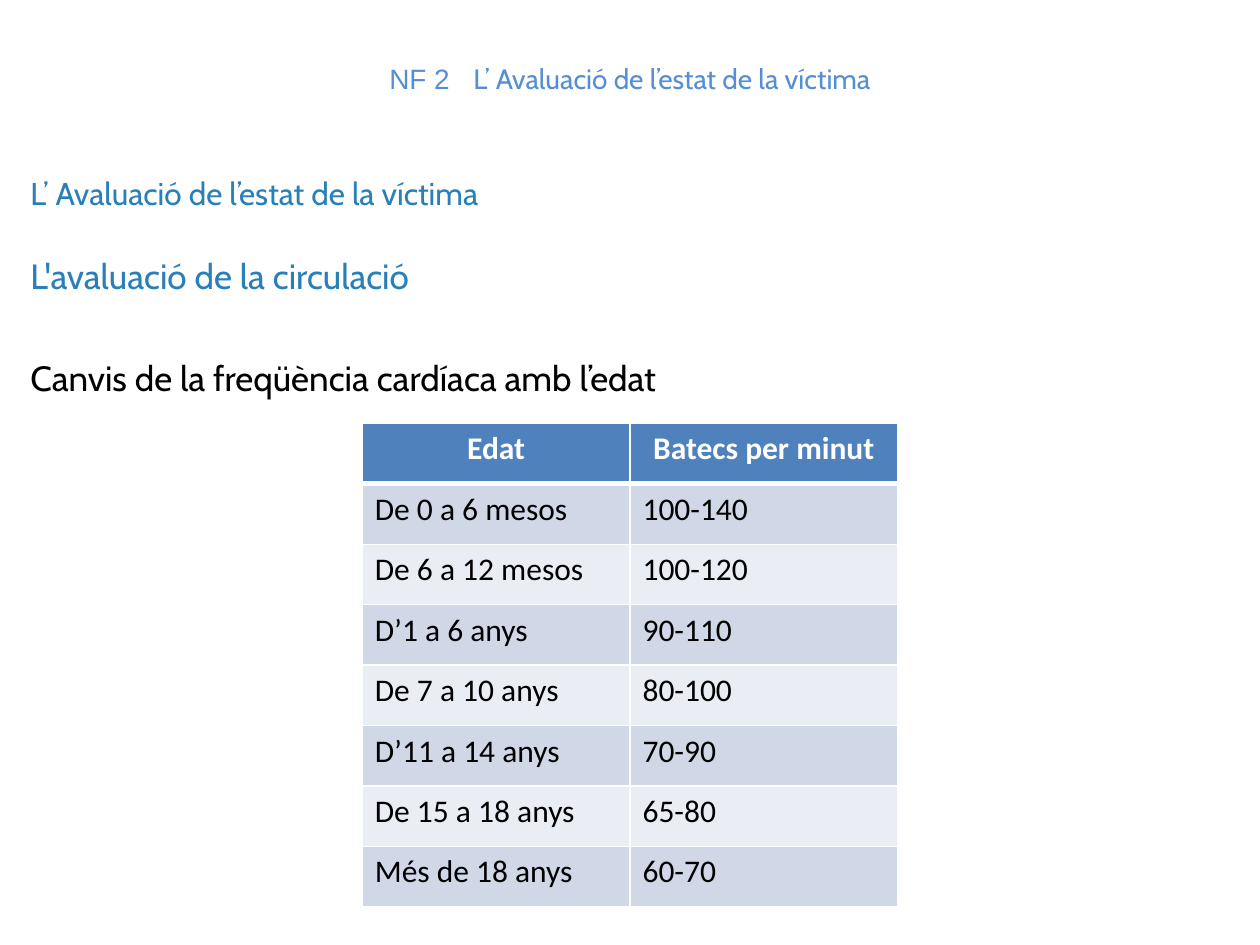
from lxml.etree import SubElement
from pptx import Presentation
from pptx.dml.color import RGBColor
from pptx.enum.text import MSO_ANCHOR, MSO_AUTO_SIZE, PP_ALIGN
from pptx.oxml.ns import qn
from pptx.util import Inches, Pt

COLUMNS, ROWS = 100, 75
BLUE, BLACK, WHITE = "2980B9", "000000", "FFFFFF"
TITLE_BLUE, HEADER_FILL = "558ED5", "4F81BD"
BAND_FILLS = ("E9EDF4", "D0D8E8")

HEADINGS = [  # text, size, colour, space before
    ("L’ Avaluació de l’estat de la víctima", 18, BLUE, 0),
    ("L'avaluació de la circulació", 20, BLUE, 24),
    ("Canvis de la freqüència cardíaca amb l’edat", 20, BLACK, 34),
]
HEART_RATES = [
    ("Edat", "Batecs per minut"),
    ("De 0 a 6 mesos", "100-140"),
    ("De 6 a 12 mesos", "100-120"),
    ("D’1 a 6 anys", "90-110"),
    ("De 7 a 10 anys", "80-100"),
    ("D’11 a 14 anys", "70-90"),
    ("De 15 a 18 anys", "65-80"),
    ("Més de 18 anys", "60-70"),
]


def color(value):
    return RGBColor.from_string(value)


class SlideBuilder:
    """Places styled elements on a grid of COLUMNS by ROWS."""

    def __init__(self, presentation):
        self.cell_width = presentation.slide_width / COLUMNS
        self.cell_height = presentation.slide_height / ROWS
        self.slide = presentation.slides.add_slide(presentation.slide_layouts[1])

    def box(self, left, top, width, height):
        return (round(left * self.cell_width), round(top * self.cell_height),
                round(width * self.cell_width), round(height * self.cell_height))

    def place(self, shape, area):
        shape.left, shape.top, shape.width, shape.height = self.box(*area)
        shape.text_frame.auto_size = MSO_AUTO_SIZE.NONE
        shape.text_frame.word_wrap = True
        return shape.text_frame

    def style(self, run, size, fill, name, bold=False):
        run.font.size, run.font.name, run.font.bold = Pt(size), name, bold
        run.font.color.rgb = color(fill)

    def title(self, area, label, text, gap):
        frame = self.place(self.slide.shapes.title, area)
        frame.vertical_anchor = MSO_ANCHOR.MIDDLE
        paragraph = frame.paragraphs[0]
        paragraph.alignment = PP_ALIGN.CENTER
        for content, font in ((label, "Arial"), (" ", "Arial"), (text, "Cabin")):
            run = paragraph.add_run()
            run.text = content
            self.style(run, 16, TITLE_BLUE, font)
        # Widen the single space between label and text
        paragraph.runs[1].font._element.set("spc", str(gap * 100))

    def headings(self, area, items, margin_top):
        frame = self.place(self.slide.placeholders[1], area)
        frame.margin_top = Inches(margin_top)
        frame.text = "\n".join(item[0] for item in items)
        for paragraph, (_, size, fill, before) in zip(frame.paragraphs, items):
            paragraph.space_before = Pt(before)
            paragraph.line_spacing = 1.01
            properties = paragraph._p.get_or_add_pPr()
            properties.set("marL", str(Inches(0.14)))
            properties.set("indent", "0")
            SubElement(properties, qn("a:buNone"))
            self.style(paragraph.runs[0], size, fill, "Cabin")

    def borders(self, cell, widths):
        properties = cell._tc.get_or_add_tcPr()
        for index, (side, width) in enumerate(widths.items()):
            line = SubElement(properties, qn(f"a:ln{side}"), w=str(Pt(width)))
            solid = SubElement(line, qn("a:solidFill"))
            SubElement(solid, qn("a:srgbClr"), val=WHITE)
            properties.insert(index, line)

    def table(self, area, records):
        shape = self.slide.shapes.add_table(len(records), len(records[0]), *self.box(*area))
        for row, record in enumerate(records):
            header = row == 0
            for column, text in enumerate(record):
                cell = shape.table.cell(row, column)
                cell.text = text
                cell.fill.solid()
                cell.fill.fore_color.rgb = color(HEADER_FILL if header else BAND_FILLS[row % 2])
                paragraph = cell.text_frame.paragraphs[0]
                paragraph.alignment = PP_ALIGN.CENTER if header else PP_ALIGN.LEFT
                self.style(paragraph.runs[0], 18, WHITE if header else BLACK, "Calibri", header)
                self.borders(cell, {"L": 1, "R": 1, "T": 3 if row == 1 else 1,
                                    "B": 3 if header else 1})


def main():
    presentation = Presentation()
    presentation.slide_width, presentation.slide_height = Inches(10), Inches(7.5)
    builder = SlideBuilder(presentation)

    # Title and headings
    builder.title((5, 3, 90, 6.4), "NF 2", "L’ Avaluació de l’estat de la víctima", gap=9)
    builder.headings((0, 10.2, 100, 64.8), HEADINGS, margin_top=0.36)

    # Heart rate by age
    builder.table((28.75, 33.6, 42.5, 38.4), HEART_RATES)

    presentation.save("out.pptx")


if __name__ == "__main__":
    main()
